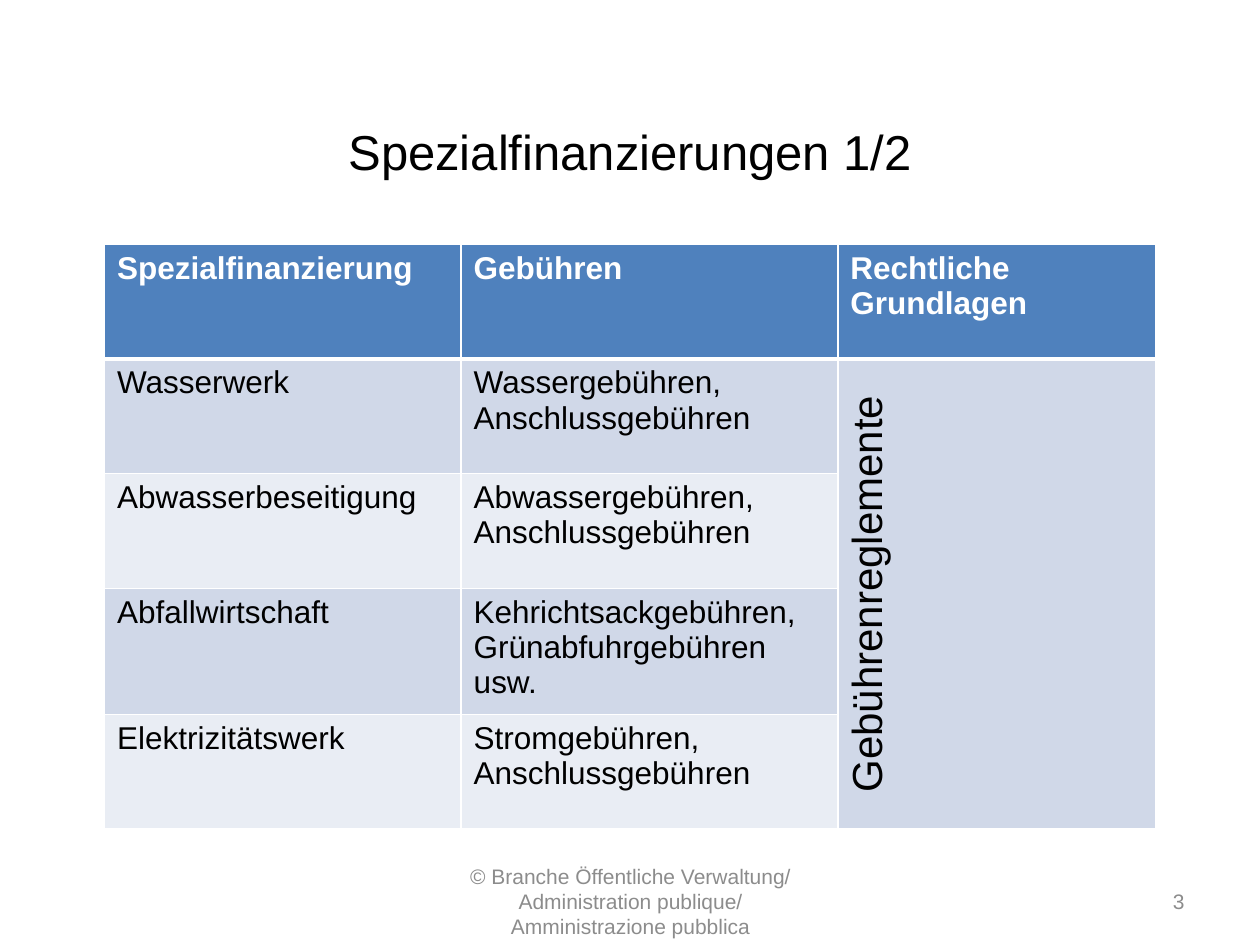
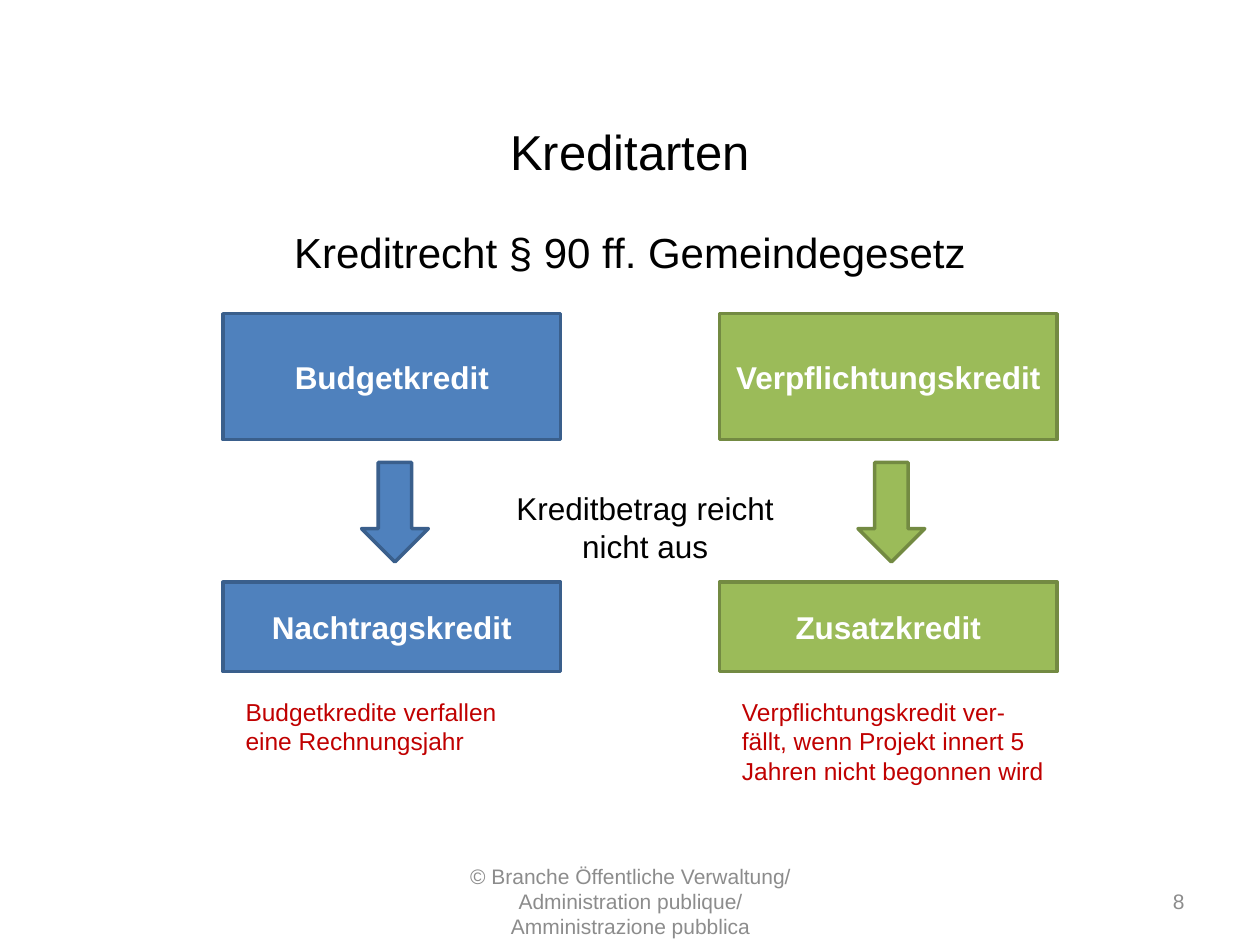
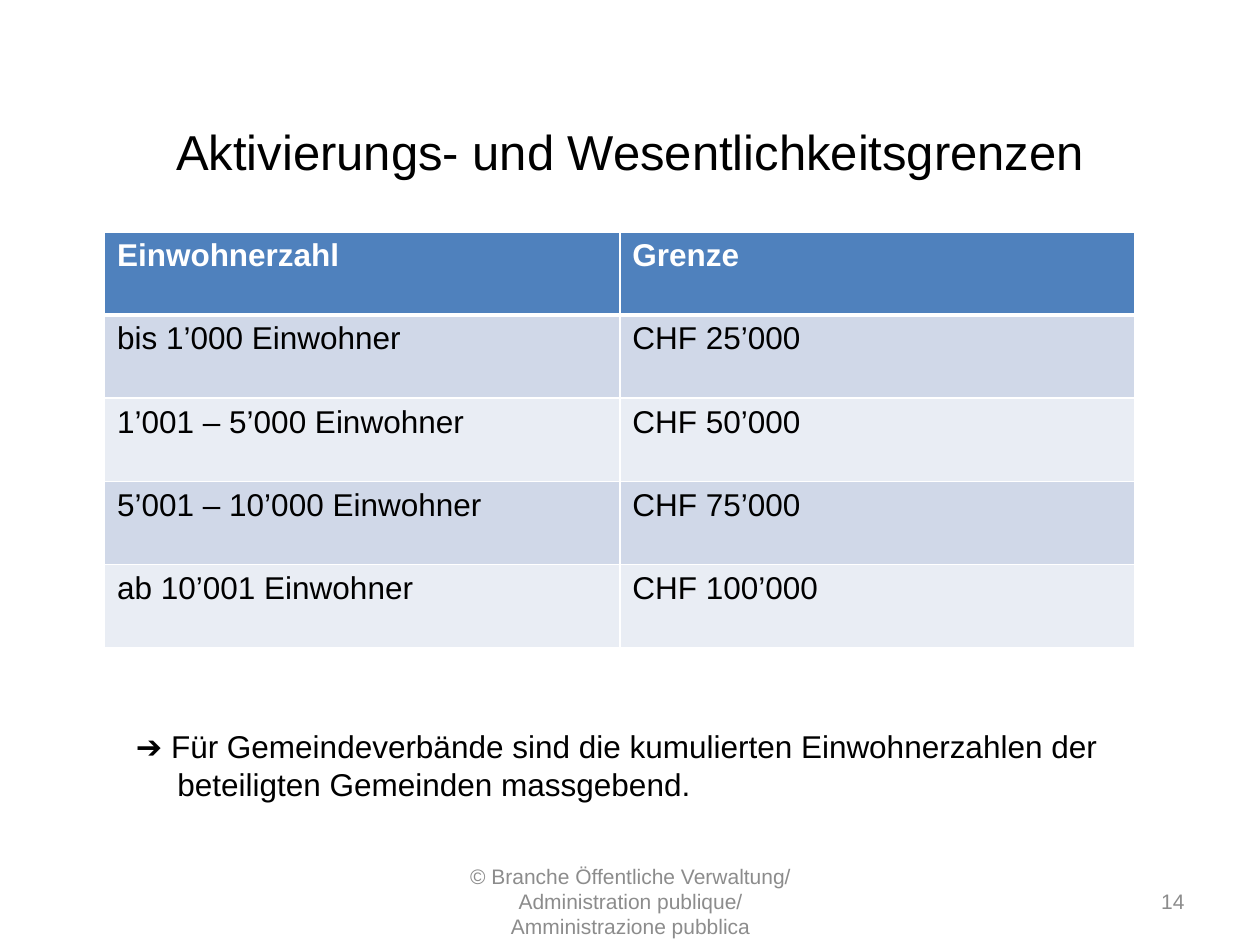
"""Build three slides on municipal finance: special funds, credit types and capitalisation limits."""
from lxml import etree
from pptx import Presentation
from pptx.dml.color import RGBColor
from pptx.enum.shapes import MSO_SHAPE
from pptx.enum.text import MSO_ANCHOR, MSO_AUTO_SIZE, PP_ALIGN
from pptx.oxml.ns import qn
from pptx.util import Inches, Pt

LEFT, CENTER, RIGHT = PP_ALIGN.LEFT, PP_ALIGN.CENTER, PP_ALIGN.RIGHT
TOP, MIDDLE = MSO_ANCHOR.TOP, MSO_ANCHOR.MIDDLE
RECTANGLE, DOWN_ARROW = MSO_SHAPE.RECTANGLE, MSO_SHAPE.DOWN_ARROW
NO_AUTOFIT = MSO_AUTO_SIZE.NONE

FONT = "Arial"
COLORS = {
    "text": "000000", "white": "FFFFFF", "footer": "8C8C8C", "warning": "C00000",
    "blue": "4F81BD", "blue_edge": "3A5F8C", "green": "9BBB59", "green_edge": "738A42",
    "band_dark": "D0D8E8", "band_light": "E9EDF4",
}
TITLE_ONLY, TITLE_AND_BODY = 5, 1
COPYRIGHT = "© Branche Öffentliche Verwaltung/ Administration publique/ Amministrazione pubblica"

FUNDS_TITLE = "Spezialfinanzierungen 1/2"
FUNDS = [
    ("Spezialfinanzierung", "Gebühren", "Rechtliche Grundlagen"),
    ("Wasserwerk", "Wassergebühren, Anschlussgebühren", ""),
    ("Abwasserbeseitigung", "Abwassergebühren, Anschlussgebühren", ""),
    ("Abfallwirtschaft", "Kehrichtsackgebühren, Grünabfuhrgebühren usw.", ""),
    ("Elektrizitätswerk", "Stromgebühren, Anschlussgebühren", ""),
]
LEGAL_BASIS = "Gebührenreglemente"

CREDITS_TITLE = "Kreditarten"
CREDIT_LAW = "Kreditrecht § 90 ff. Gemeindegesetz"
SHORTFALL = "Kreditbetrag reicht nicht aus"
CREDITS = [
    ("blue", "Budgetkredit", "Nachtragskredit",
     "Budgetkredite verfallen eine Rechnungsjahr", 2.52),
    ("green", "Verpflichtungskredit", "Zusatzkredit",
     "Verpflichtungskredit ver-fällt, wenn Projekt innert 5 Jahren nicht begonnen wird", 2.61),
]
CREDIT_LEFT, CREDIT_STEP, CREDIT_WIDTH = 1.77, 3.94, 2.68

LIMITS_TITLE = "Aktivierungs- und Wesentlichkeitsgrenzen"
LIMITS = [
    ("Einwohnerzahl", "Grenze"),
    ("bis 1’000 Einwohner", "CHF 25’000"),
    ("1’001 – 5’000 Einwohner", "CHF 50’000"),
    ("5’001 – 10’000 Einwohner", "CHF 75’000"),
    ("ab 10’001 Einwohner", "CHF 100’000"),
]
LIMITS_NOTE = ("➔ Für Gemeindeverbände sind die kumulierten Einwohnerzahlen der "
               "beteiligten Gemeinden massgebend.")


def rgb(name):
    return RGBColor.from_string(COLORS[name])


def write(frame, text, size, color="text", align=LEFT, bold=False):
    paragraph = frame.paragraphs[0]
    paragraph.alignment = align
    run = paragraph.add_run()
    run.text = text
    run.font.name, run.font.size, run.font.bold = FONT, Pt(size), bold
    run.font.color.rgb = rgb(color)
    return paragraph


def set_indent(paragraph, margin, hanging):
    properties = paragraph._p.get_or_add_pPr()
    properties.set("marL", str(Inches(margin)))
    properties.set("indent", str(-Inches(hanging)))
    return properties


def fill_placeholder(shape, box, text, size, anchor):
    shape.left, shape.top, shape.width, shape.height = map(Inches, box)
    frame = shape.text_frame
    frame.auto_size, frame.vertical_anchor = NO_AUTOFIT, anchor
    return write(frame, text, size, align=CENTER)


def add_text(slide, box, text, size, color="text", align=LEFT, anchor=TOP):
    frame = slide.shapes.add_textbox(*map(Inches, box)).text_frame
    frame.word_wrap, frame.vertical_anchor = True, anchor
    return write(frame, text, size, color, align)


def add_block(slide, preset, box, color, text=""):
    block = slide.shapes.add_shape(preset, *map(Inches, box))
    block.shadow.inherit = False
    block.fill.solid()
    block.fill.fore_color.rgb = rgb(color)
    block.line.color.rgb = rgb(color + "_edge")
    block.line.width = Pt(2)
    if text:
        block.text_frame.word_wrap = True
        block.text_frame.vertical_anchor = MIDDLE
        write(block.text_frame, text, 18, "white", CENTER, True)


def add_page(deck, layout, title, number):
    slide = deck.slides.add_slide(deck.slide_layouts[layout])
    fill_placeholder(slide.shapes.title, (0.5, 0.84, 9, 0.71), title, 28, MIDDLE)
    add_text(slide, (7.17, 6.95, 2.33, 0.4), str(number), 12, "footer", RIGHT, MIDDLE)
    add_text(slide, (3.42, 6.95, 3.17, 0.4), COPYRIGHT, 12, "footer", CENTER, MIDDLE)
    return slide


def style_cell(cell, row):
    properties = cell._tc.get_or_add_tcPr()
    widths = {"L": 1, "R": 1, "T": 3 if row == 1 else 1, "B": 3 if row == 0 else 1}
    for side, width in widths.items():
        border = etree.SubElement(properties, qn(f"a:ln{side}"), w=str(Pt(width)))
        fill = etree.SubElement(border, qn("a:solidFill"))
        etree.SubElement(fill, qn("a:srgbClr"), val=COLORS["white"])
    cell.fill.solid()
    band = "band_dark" if row % 2 else "band_light"
    cell.fill.fore_color.rgb = rgb(band if row else "blue")


def add_banded_table(slide, left, top, widths, row_height, rows):
    table = slide.shapes.add_table(
        len(rows), len(widths), Inches(left), Inches(top),
        Inches(sum(widths)), Inches(row_height * len(rows))).table
    for column, width in zip(table.columns, widths):
        column.width = Inches(width)
    for r, texts in enumerate(rows):
        table.rows[r].height = Inches(row_height)
        for c, text in enumerate(texts):
            cell = table.cell(r, c)
            style_cell(cell, r)
            if text:
                write(cell.text_frame, text, 18, "text" if r else "white", bold=r == 0)
    return table


def build_funds(deck):
    slide = add_page(deck, TITLE_ONLY, FUNDS_TITLE, 3)
    table = add_banded_table(slide, 0.83, 1.94, (2.83, 2.99, 2.52), 0.91, FUNDS)
    basis = table.cell(1, 2)
    basis.merge(table.cell(len(FUNDS) - 1, 2))
    basis.vertical_anchor = MIDDLE
    basis._tc.tcPr.set("vert", "vert270")
    write(basis.text_frame, LEGAL_BASIS, 24, align=CENTER)


def build_credits(deck):
    slide = add_page(deck, TITLE_AND_BODY, CREDITS_TITLE, 8)
    law = fill_placeholder(slide.placeholders[1], (0.5, 1.75, 9, 4.95), CREDIT_LAW, 24, TOP)
    etree.SubElement(set_indent(law, 0, 0), qn("a:buNone"))
    law.space_before = Pt(0)
    for i, (color, credit, extension, expiry, expiry_width) in enumerate(CREDITS):
        left = CREDIT_LEFT + i * CREDIT_STEP
        add_block(slide, RECTANGLE, (left, 2.49, CREDIT_WIDTH, 1), color, credit)
        add_block(slide, DOWN_ARROW, (left + 1.1, 3.67, 0.53, 0.79), color)
        add_block(slide, RECTANGLE, (left, 4.62, CREDIT_WIDTH, 0.71), color, extension)
        add_text(slide, (left + 0.08, 5.48, expiry_width, 0.81), expiry, 14, "warning")
    add_text(slide, (3.98, 3.83, 2.28, 0.71), SHORTFALL, 18, align=CENTER)


def build_limits(deck):
    slide = add_page(deck, TITLE_ONLY, LIMITS_TITLE, 14)
    add_banded_table(slide, 0.83, 1.84, (4.09, 4.09), 0.66, LIMITS)
    note = add_text(slide, (0.98, 5.72, 8.11, 0.71), LIMITS_NOTE, 18)
    set_indent(note, 0.33, 0.33)


def main():
    deck = Presentation()
    deck.slide_width, deck.slide_height = Inches(10), Inches(7.5)
    build_funds(deck)
    build_credits(deck)
    build_limits(deck)
    deck.save("out.pptx")


if __name__ == "__main__":
    main()
